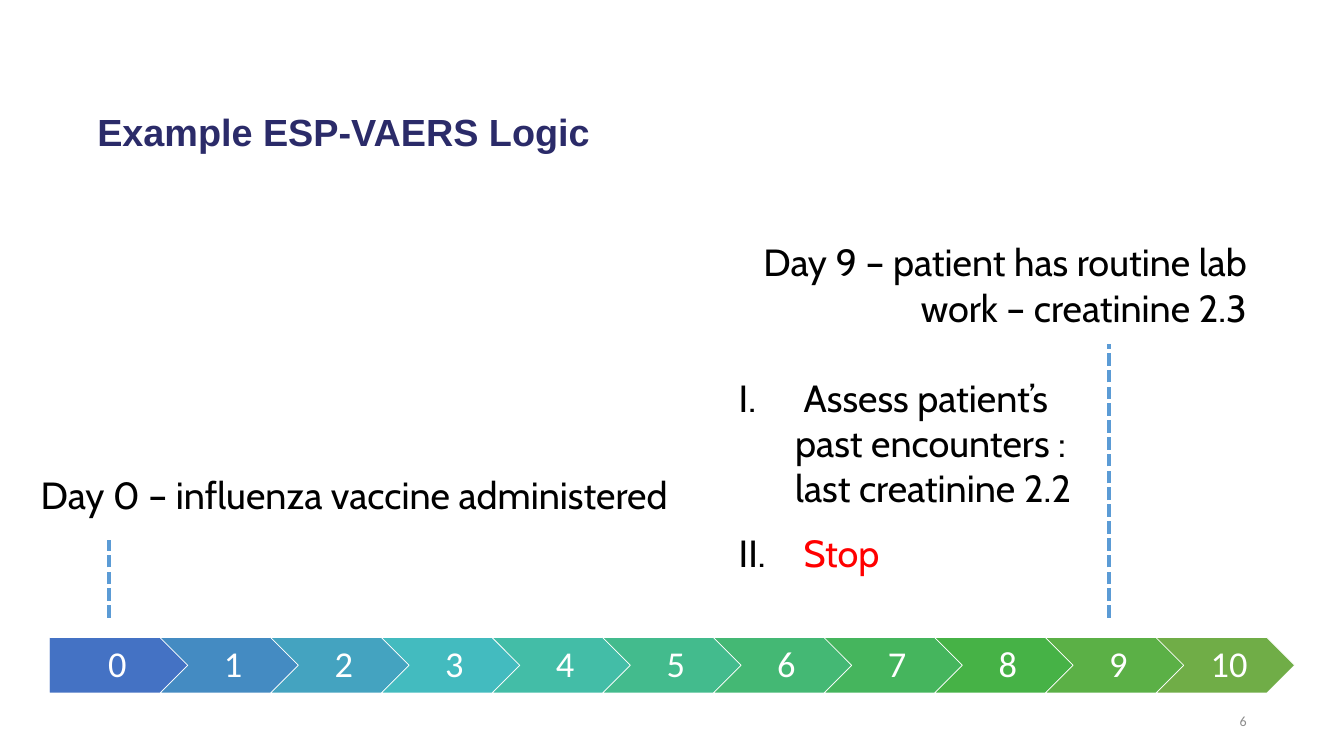
import lxml.etree
import pptx
import pptx.dml.color
import pptx.enum.dml
import pptx.enum.shapes
import pptx.enum.text
import pptx.oxml.ns
import pptx.util

Inches = pptx.util.Inches
Shapes = pptx.enum.shapes.MSO_SHAPE
Align = pptx.enum.text.PP_ALIGN
Anchor = pptx.enum.text.MSO_ANCHOR
qn = pptx.oxml.ns.qn


class Theme:
    """Colours and type styles of the slide."""
    WHITE = "FFFFFF"
    STOP = "FF0000"
    MARKER = "5B9BD5"
    DAYS = ["4472C4", "448BC2", "44A3C0", "43BBBF", "43BDA7", "43BB8D",
            "44B874", "45B55D", "46B246", "5BB046", "70AD47"]
    TITLE = {"name": "Arial", "size": 54, "bold": True, "color": "2B2B69"}
    BODY = {"name": "Cabin", "size": 54, "color": "000000"}
    DAY = {"name": "Calibri", "size": 52, "color": WHITE}
    NUMBER = {"name": "Calibri", "size": 20, "color": "8C8C8C"}


def rgb(value):
    return pptx.dml.color.RGBColor.from_string(value)


def apply_font(font, style):
    for name, value in style.items():
        if name == "color":
            font.color.rgb = rgb(value)
        elif name == "size":
            font.size = pptx.util.Pt(value)
        else:
            setattr(font, name, value)


class SlideBuilder:
    def __init__(self, slide, theme):
        self.slide = slide
        self.theme = theme

    def place(self, shape, *box):
        for name, value in zip(("left", "top", "width", "height"), box):
            setattr(shape, name, Inches(value))

    def title(self, text, *box):
        shape = self.slide.shapes.title
        self.place(shape, *box)
        frame = shape.text_frame
        frame.text = text
        frame.vertical_anchor = Anchor.TOP
        paragraph = frame.paragraphs[0]
        paragraph.alignment = Align.LEFT
        paragraph.line_spacing = 0.9
        apply_font(paragraph.runs[0].font, self.theme.TITLE)

    def text(self, content, box, style, align=Align.LEFT, anchor=Anchor.TOP):
        shape = self.slide.shapes.add_textbox(*map(Inches, box))
        frame = shape.text_frame
        frame.word_wrap = True
        frame.vertical_anchor = anchor
        paragraph = frame.paragraphs[0]
        paragraph.alignment = align
        run = paragraph.add_run()
        run.text = content
        apply_font(run.font, style)

    def roman_list(self, items, box, style, hanging):
        """Each item is a list of (text, style changes) runs."""
        shape = self.slide.shapes.add_textbox(*map(Inches, box))
        frame = shape.text_frame
        frame.word_wrap = True
        for index, runs in enumerate(items):
            paragraph = frame.add_paragraph() if index else frame.paragraphs[0]
            properties = paragraph._p.get_or_add_pPr()
            properties.set("marL", str(Inches(hanging)))
            properties.set("indent", str(-Inches(hanging)))
            lxml.etree.SubElement(properties, qn("a:buAutoNum"), type="romanUcPeriod")
            if index:
                paragraph.space_before = pptx.util.Pt(style["size"] / 2)
            for content, changes in runs:
                run = paragraph.add_run()
                run.text = content
                apply_font(run.font, {**style, **changes})

    def arrow(self, kind, label, color, box, inset):
        shape = self.slide.shapes.add_shape(kind, *map(Inches, box))
        shape.shadow.inherit = False
        shape.fill.solid()
        shape.fill.fore_color.rgb = rgb(color)
        shape.line.color.rgb = rgb(self.theme.WHITE)
        shape.line.width = pptx.util.Pt(1)
        frame = shape.text_frame
        frame.text = label
        margins = {"margin_left": inset, "margin_right": 0.08,
                   "margin_top": 0.15, "margin_bottom": 0.15}
        for name, value in margins.items():
            setattr(frame, name, Inches(value))
        frame.vertical_anchor = Anchor.MIDDLE
        paragraph = frame.paragraphs[0]
        paragraph.alignment = Align.CENTER
        paragraph.line_spacing = 0.9
        apply_font(paragraph.runs[0].font, self.theme.DAY)

    def marker(self, x, bottom, top):
        connector = self.slide.shapes.add_connector(
            pptx.enum.shapes.MSO_CONNECTOR.STRAIGHT,
            *map(Inches, (x, bottom, x, top)))
        connector.line.color.rgb = rgb(self.theme.MARKER)
        connector.line.width = pptx.util.Pt(6)
        connector.line.dash_style = pptx.enum.dml.MSO_LINE.SQUARE_DOT
        lxml.etree.SubElement(connector._element.spPr, qn("a:effectLst"))


def main():
    presentation = pptx.Presentation()
    presentation.slide_width = Inches(26.67)
    presentation.slide_height = Inches(15)
    slide = presentation.slides.add_slide(presentation.slide_layouts[5])
    theme = Theme()
    builder = SlideBuilder(slide, theme)

    # Timeline of days
    left, pitch = 0.98, 2.196
    for day, color in enumerate(theme.DAYS):
        kind = Shapes.CHEVRON if day else Shapes.PENTAGON
        box = (left + day * pitch, 12.65, 2.75, 1.1)
        builder.arrow(kind, str(day), color, box, 0.23 if day else 0.3)

    # Title
    builder.title("Example ESP-VAERS Logic", 1.83, 2.2, 23, 1.63)

    # Assessment steps
    steps = [
        [(" Assess patient’s past encounters : last creatinine 2.2", {})],
        [(" ", {}), ("Stop", {"color": theme.STOP})],
    ]
    builder.roman_list(steps, (14.56, 7.38, 7.44, 4.19), theme.BODY, 1.12)

    # Events with their markers
    builder.text("Day 0 – influenza vaccine administered",
                 (0.71, 9.31, 13.85, 1.01), theme.BODY)
    builder.marker(2.17, 12.26, 10.72)
    builder.text("Day 9 – patient has routine lab work – creatinine 2.3",
                 (14.09, 4.69, 10.75, 1.92), theme.BODY, Align.RIGHT)
    builder.marker(22, 12.26, 6.83)

    # Slide number
    builder.text("6", (18.84, 13.9, 6, 0.8), theme.NUMBER, Align.RIGHT, Anchor.MIDDLE)

    presentation.save("out.pptx")


if __name__ == "__main__":
    main()
